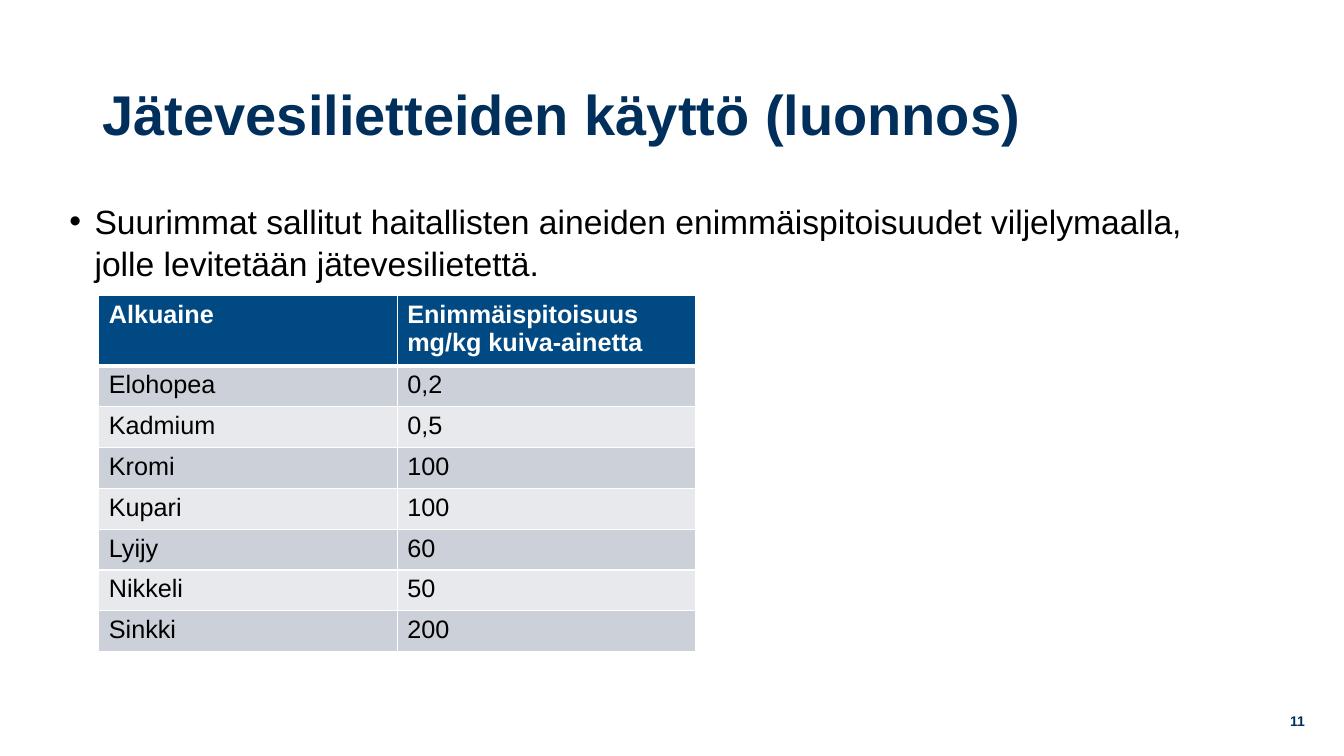
from lxml import etree
from pptx import Presentation
from pptx.dml.color import RGBColor
from pptx.enum.text import MSO_ANCHOR, PP_ALIGN
from pptx.oxml.ns import qn
from pptx.util import Inches, Pt

MIDDLE, TOP = MSO_ANCHOR.MIDDLE, MSO_ANCHOR.TOP
LEFT, RIGHT = PP_ALIGN.LEFT, PP_ALIGN.RIGHT

NAVY = RGBColor(0x00, 0x2F, 0x5B)
HEADER_BLUE = RGBColor(0x00, 0x49, 0x82)
DARK_BAND = RGBColor(0xCC, 0xD0, 0xD8)
LIGHT_BAND = RGBColor(0xE7, 0xE9, 0xED)
WHITE = RGBColor(0xFF, 0xFF, 0xFF)
BLACK = RGBColor(0x00, 0x00, 0x00)

ROWS = [
    ("Alkuaine", "Enimmäispitoisuus mg/kg kuiva-ainetta"),
    ("Elohopea", "0,2"),
    ("Kadmium", "0,5"),
    ("Kromi", "100"),
    ("Kupari", "100"),
    ("Lyijy", "60"),
    ("Nikkeli", "50"),
    ("Sinkki", "200"),
]


def add_span(para, text, size, color, bold=False):
    span = para.add_run()
    span.text = text
    span.font.name = "Arial"
    span.font.size = Pt(size)
    span.font.bold = bold
    span.font.color.rgb = color


def add_box(left, top, width, height, anchor, align=LEFT):
    box = page.shapes.add_textbox(Inches(left), Inches(top), Inches(width), Inches(height))
    box.text_frame.word_wrap = True
    box.text_frame.vertical_anchor = anchor
    para = box.text_frame.paragraphs[0]
    para.alignment = align
    return para


deck = Presentation()
deck.slide_width = Inches(13.33)
deck.slide_height = Inches(7.5)
page = deck.slides.add_slide(deck.slide_layouts[6])

# Title and page number
title = add_box(0.92, 0.4, 10.64, 1.45, MIDDLE)
add_span(title, "Jätevesilietteiden käyttö (luonnos)", 40, NAVY, True)
number = add_box(10.04, 6.95, 3, 0.4, MIDDLE, RIGHT)
add_span(number, "11", 10, NAVY, True)

# Bulleted introduction
intro = add_box(0.59, 1.92, 11.5, 1, TOP)
intro.line_spacing = 1.05
properties = intro._p.get_or_add_pPr()
properties.set("marL", str(Inches(0.25)))
properties.set("indent", str(-Inches(0.25)))
etree.SubElement(properties, qn("a:buFont"), typeface="Arial")
etree.SubElement(properties, qn("a:buChar"), char="•")
add_span(intro, "Suurimmat sallitut haitallisten aineiden enimmäispitoisuudet "
         "viljelymaalla, jolle levitetään jätevesilietettä.", 24, BLACK)

# Table of limit values
table = page.shapes.add_table(len(ROWS), 2, Inches(0.98), Inches(2.93),
                              Inches(5.92), Inches(3.49)).table
for column in table.columns:
    column.width = Inches(2.96)
for r, values in enumerate(ROWS):
    header = r == 0
    table.rows[r].height = Inches(0.65 if header else 0.405)
    for c, value in enumerate(values):
        cell = table.cell(r, c)
        add_span(cell.text_frame.paragraphs[0], value, 18,
                 WHITE if header else BLACK, header)

        # White cell borders, thicker around the header's lower edge
        cell_properties = cell._tc.get_or_add_tcPr()
        for side in ("lnL", "lnR", "lnT", "lnB"):
            thick = (r, side) in ((0, "lnB"), (1, "lnT"))
            line = etree.SubElement(cell_properties, qn("a:" + side),
                                    w=str(Pt(3 if thick else 1)))
            fill = etree.SubElement(line, qn("a:solidFill"))
            etree.SubElement(fill, qn("a:srgbClr"), val=str(WHITE))

        cell.fill.solid()
        cell.fill.fore_color.rgb = (HEADER_BLUE if header
                                    else DARK_BAND if r % 2 else LIGHT_BAND)

deck.save("out.pptx")
